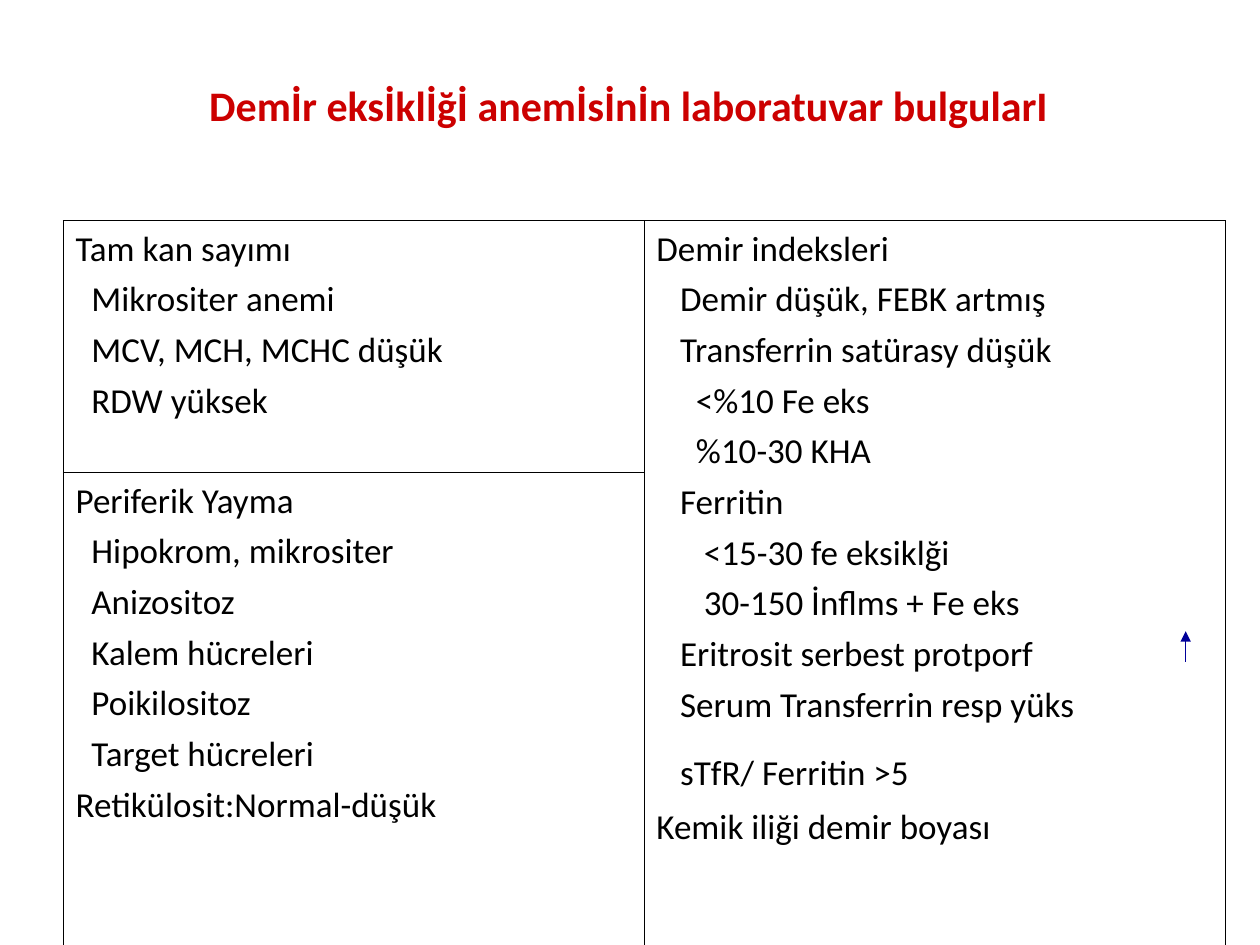
from lxml import etree
from pptx import Presentation
from pptx.dml.color import RGBColor
from pptx.enum import shapes, text
from pptx.oxml.ns import qn
from pptx.util import Inches, Pt

TITLE = "Demİr eksİklİğİ anemİsİnİn laboratuvar bulgularI"

# Each line: (indent in space widths, text[, space before in points])
BLOOD_COUNT = [
    (0, "Tam kan sayımı", 0),
    (2, "Mikrositer anemi"),
    (2, "MCV, MCH, MCHC düşük"),
    (2, "RDW yüksek"),
]
SMEAR = [
    (0, "Periferik Yayma", 0),
    (2, "Hipokrom, mikrositer"),
    (2, "Anizositoz"),
    (2, "Kalem hücreleri"),
    (2, "Poikilositoz"),
    (2, "Target hücreleri"),
    (0, "Retikülosit:Normal-düşük"),
]
IRON_INDICES = [
    (0, "Demir indeksleri", 0),
    (3, "Demir düşük, FEBK artmış"),
    (3, "Transferrin satürasy düşük"),
    (5, "<%10 Fe eks"),
    (5, "%10-30 KHA"),
    (3, "Ferritin"),
    (6, "<15-30 fe eksiklği"),
    (6, "30-150 İnflms + Fe eks"),
    (3, "Eritrosit serbest protporf"),
    (3, "Serum Transferrin resp yüks"),
    (3, "sTfR/ Ferritin >5", 14),
    (0, "Kemik iliği demir boyası", 6),
]
ROW_HEIGHTS = [2, 3.56]
SPACE_WIDTH = Pt(4.52)


def rgb(color):
    return RGBColor.from_string(color)


def style(p, size, color, bold=False):
    for r in p.runs:
        r.font.name = "Calibri"
        r.font.size = Pt(size)
        r.font.bold = bold
        r.font.color.rgb = rgb(color)


def set_borders(cell, color="000000", width=0.25):
    tc_pr = cell._tc.get_or_add_tcPr()
    for i, side in enumerate(("lnL", "lnR", "lnT", "lnB")):
        ln = etree.Element(qn("a:" + side), w=str(Pt(width)))
        fill = etree.SubElement(ln, qn("a:solidFill"))
        etree.SubElement(fill, qn("a:srgbClr"), val=color)
        tc_pr.insert(i, ln)


def fill_cell(cell, lines):
    tf = cell.text_frame
    for i, (indent, words, *before) in enumerate(lines):
        p = tf.add_paragraph() if i else tf.paragraphs[0]
        p.text = words
        p.line_spacing = 1.02
        p.space_before = Pt(before[0] if before else 4)
        p._p.get_or_add_pPr().set("marL", str(int(indent * SPACE_WIDTH)))
        style(p, 20, "000000")


prs = Presentation()
prs.slide_width, prs.slide_height = Inches(10), Inches(7.5)
s = prs.slides.add_slide(prs.slide_layouts[6])

title = s.shapes.add_textbox(Inches(0.48), Inches(0.11), Inches(9.02), Inches(1.44))
tf = title.text_frame
tf.word_wrap = True
tf.vertical_anchor = text.MSO_ANCHOR.MIDDLE
tf.text = TITLE
tf.paragraphs[0].alignment = text.PP_ALIGN.CENTER
style(tf.paragraphs[0], 24, "CC0000", bold=True)

table = s.shapes.add_table(2, 2, Inches(0.5), Inches(1.75), Inches(9.22),
                           Inches(sum(ROW_HEIGHTS))).table
table.first_row = table.horz_banding = False
for row, height in zip(table.rows, ROW_HEIGHTS):
    row.height = Inches(height)
for cell in table.iter_cells():
    cell.fill.background()
    set_borders(cell)
table.cell(0, 1).merge(table.cell(1, 1))
fill_cell(table.cell(0, 0), BLOOD_COUNT)
fill_cell(table.cell(1, 0), SMEAR)
fill_cell(table.cell(0, 1), IRON_INDICES)

arrow = s.shapes.add_connector(shapes.MSO_CONNECTOR.STRAIGHT, Inches(9.41),
                               Inches(5.25), Inches(9.41), Inches(5.01))
arrow.line.color.rgb = rgb("000099")
arrow.line.width = Pt(0.75)
etree.SubElement(arrow.line._get_or_add_ln(), qn("a:tailEnd"), type="triangle")
etree.SubElement(arrow._element.spPr, qn("a:effectLst"))

prs.save("out.pptx")
